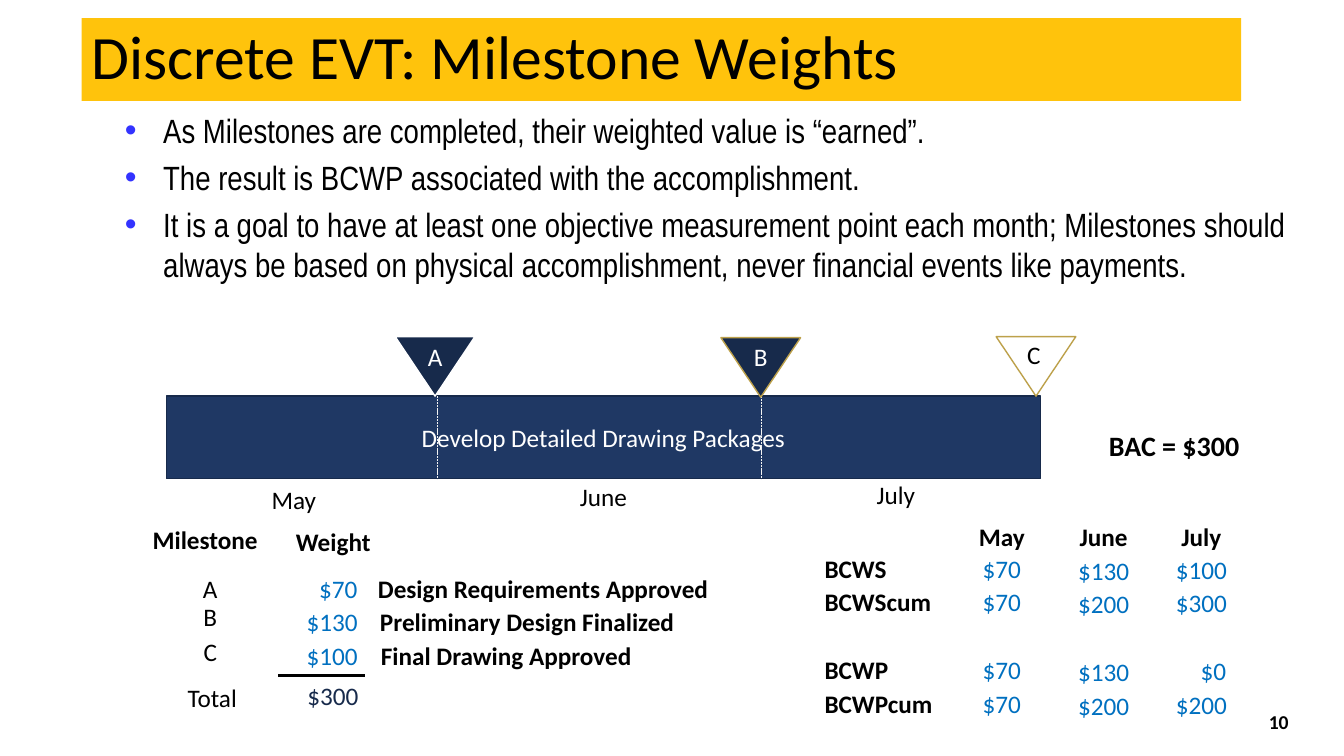
"""Build the slide on discrete earned value with milestone weights."""
from dataclasses import dataclass
from typing import Optional

from lxml.etree import SubElement
from pptx import Presentation
from pptx.dml.color import RGBColor
from pptx.enum.dml import MSO_LINE
from pptx.enum.shapes import MSO_CONNECTOR, MSO_SHAPE
from pptx.enum.text import MSO_ANCHOR as Anchor, PP_ALIGN as Align
from pptx.oxml.ns import qn
from pptx.util import Inches, Pt

BLACK = RGBColor(0x00, 0x00, 0x00)
WHITE = RGBColor(0xFF, 0xFF, 0xFF)
OFF_WHITE = RGBColor(0xF2, 0xF2, 0xF2)
NAVY = RGBColor(0x17, 0x2A, 0x4B)
BAR_BLUE = RGBColor(0x1F, 0x38, 0x64)
VALUE_BLUE = RGBColor(0x00, 0x70, 0xC0)
BULLET_BLUE = RGBColor(0x33, 0x33, 0xFF)
GOLD = RGBColor(0xBD, 0xA1, 0x4B)
AMBER = RGBColor(0xFF, 0xC3, 0x0C)

CELL_WIDTH = 0.99
TEXT_HEIGHT = 0.4
DIGIT_SHIFT = 0.06


@dataclass(frozen=True)
class Marker:
    """A triangle on the timeline with the place of its letter."""
    letter: str
    left: float
    top: float
    letter_left: float
    letter_top: float
    fill: Optional[RGBColor]
    outline: RGBColor
    ink: RGBColor


@dataclass(frozen=True)
class Milestone:
    """A row of the weight list."""
    letter: str
    letter_top: float
    weight: str
    event: str
    event_left: float


@dataclass(frozen=True)
class Month:
    """A month on the timeline and its column of values."""
    name: str
    label_left: float
    label_top: float
    left: float
    drop: float
    values: tuple[str, ...]


MARKERS = (
    Marker("A", 3.92, 3.34, 3.99, 3.34, NAVY, WHITE, WHITE),
    Marker("B", 7.15, 3.35, 7.22, 3.34, NAVY, GOLD, WHITE),
    Marker("C", 9.88, 3.34, 9.93, 3.32, None, GOLD, BLACK),
)
MILESTONES = (
    Milestone("A", 5.64, "$70", "Design Requirements Approved", 3.65),
    Milestone("B", 5.92, "$130", "Preliminary Design Finalized", 3.67),
    Milestone("C", 6.26, "$100", "Final Drawing Approved", 3.68),
)
MONTHS = (
    Month("May", 2.23, 4.76, 9.44, 0, ("$70", "$70", "$70", "$70")),
    Month("June", 5.3, 4.73, 10.45, 0.02, ("$130", "$200", "$130", "$200")),
    Month("July", 8.2, 4.71, 11.42, 0.01, ("$100", "$300", "$0", "$200")),
)
MEASURES = (("BCWS", 5.44), ("BCWScum", 5.77), ("BCWP", 6.44), ("BCWPcum", 6.78))
POINTS = (
    "As Milestones are completed, their weighted value is “earned”.",
    "The result is BCWP associated with the accomplishment.",
    "It is a goal to have at least one objective measurement point each month; "
    "Milestones should always be based on physical accomplishment, "
    "never financial events like payments.",
)

deck = Presentation()
deck.slide_width, deck.slide_height = Inches(13.33), Inches(7.5)
slide = deck.slides.add_slide(deck.slide_layouts[6])


def write(frame, text: str, *, size: float = 18, font: str = "Calibri",
          color: RGBColor = BLACK, bold: bool = False,
          align: Align = Align.CENTER, anchor: Anchor = Anchor.TOP):
    """Fill a text frame, one paragraph a line, and return its paragraphs."""
    frame.word_wrap = True
    frame.vertical_anchor = anchor
    frame.text = text
    for paragraph in frame.paragraphs:
        paragraph.alignment = align
        for run in paragraph.runs:
            run.font.size, run.font.name, run.font.bold = Pt(size), font, bold
            run.font.color.rgb = color
    return frame.paragraphs


def label(text: str, left: float, top: float, width: float = CELL_WIDTH,
          height: float = TEXT_HEIGHT, **style):
    """Add a text box and return its paragraphs."""
    box = slide.shapes.add_textbox(*map(Inches, (left, top, width, height)))
    return write(box.text_frame, text, **style)


def block(kind: MSO_SHAPE, left: float, top: float, width: float, height: float,
          fill: Optional[RGBColor] = None, outline: Optional[RGBColor] = None):
    """Add a flat shape."""
    shape = slide.shapes.add_shape(kind, *map(Inches, (left, top, width, height)))
    shape.shadow.inherit = False
    if fill is None:
        shape.fill.background()
    else:
        shape.fill.solid()
        shape.fill.fore_color.rgb = fill
    if outline is None:
        shape.line.fill.background()
    else:
        shape.line.color.rgb = outline
        shape.line.width = Pt(1)
    return shape


def rule(x1: float, y1: float, x2: float, y2: float, color: RGBColor,
         width: float, dash: Optional[MSO_LINE] = None) -> None:
    """Add a straight line."""
    line = slide.shapes.add_connector(
        MSO_CONNECTOR.STRAIGHT, *map(Inches, (x1, y1, x2, y2)))
    line.line.color.rgb = color
    line.line.width = Pt(width)
    if dash is not None:
        line.line.dash_style = dash
    SubElement(line._element.spPr, qn("a:effectLst"))


def add_bullet(paragraph) -> None:
    """Give a paragraph a hanging coloured bullet and space above."""
    props = paragraph._p.get_or_add_pPr()
    props.set("marL", str(Inches(0.38)))
    props.set("indent", str(-Inches(0.38)))
    space = SubElement(props, qn("a:spcBef"))
    SubElement(space, qn("a:spcPct"), val="20000")
    color = SubElement(props, qn("a:buClr"))
    SubElement(color, qn("a:srgbClr"), val=str(BULLET_BLUE))
    SubElement(props, qn("a:buFont"), typeface="Arial")
    SubElement(props, qn("a:buChar"), char="•")


def amounts(values: tuple[str, ...], left: float, tops: list[float]) -> None:
    """Add a column of amounts aligned on their last digit."""
    longest = max(map(len, values))
    for value, top in zip(values, tops):
        shift = DIGIT_SHIFT * (longest - len(value))
        label(value, left + shift, top, color=VALUE_BLUE)


def draw_heading() -> None:
    """Draw the title band and the bullet points."""
    band = block(MSO_SHAPE.RECTANGLE, 0.81, 0.18, 11.5, 0.82, AMBER)
    title, = write(band.text_frame, "Discrete EVT: Milestone Weights", size=44,
                   align=Align.LEFT, anchor=Anchor.MIDDLE)
    title.line_spacing = 0.9
    for point in label("\n".join(POINTS), 1.14, 1.04, 12.19, 1.88, size=24,
                       font="Arial Narrow", align=Align.LEFT):
        add_bullet(point)


def draw_timeline() -> None:
    """Draw the work bar with its markers and months."""
    bar = block(MSO_SHAPE.RECTANGLE, 1.65, 3.93, 8.67, 0.82, BAR_BLUE, NAVY)
    write(bar.text_frame, "Develop Detailed Drawing Packages", color=WHITE,
          anchor=Anchor.MIDDLE)
    for x in (4.34, 7.55):
        rule(x, 3.93, x, 4.76, OFF_WHITE, 0.5, MSO_LINE.SQUARE_DOT)
    for mark in MARKERS:
        triangle = block(MSO_SHAPE.ISOSCELES_TRIANGLE, mark.left, mark.top,
                         0.79, 0.59, mark.fill, mark.outline)
        triangle.rotation = 180
        label(mark.letter, mark.letter_left, mark.letter_top, 0.65, color=mark.ink)
    for month in MONTHS:
        label(month.name, month.label_left, month.label_top, 1.37)
    label("BAC = $300", 10.9, 4.2, 1.58, 0.44, size=20, bold=True, align=Align.LEFT)


def draw_weights() -> None:
    """Draw the milestone weights and their total."""
    label("Milestone", 1.37, 5.15, 1.33, bold=True)
    label("Weight", 2.81, 5.17, bold=True)
    tops = [5.64 + 0.33 * row for row in range(len(MILESTONES))]
    amounts(tuple(item.weight for item in MILESTONES), 2.8, tops)
    for item, top in zip(MILESTONES, tops):
        label(item.letter, 1.59, item.letter_top)
        label(item.event, item.event_left, top, 4.04, bold=True, align=Align.LEFT)
    rule(2.76, 6.7, 3.62, 6.7, BLACK, 2.25)
    label("Total", 1.61, 6.72)
    label("$300", 2.95, 6.7, 0.75, color=NAVY, align=Align.LEFT)


def draw_measures() -> None:
    """Draw the monthly planned and earned values."""
    for name, top in MEASURES:
        label(name, 8.08, top, 1.33, bold=True, align=Align.LEFT)
    for month in MONTHS:
        label(month.name, month.left, 5.12, bold=True)
        amounts(month.values, month.left, [top + month.drop for _, top in MEASURES])


if __name__ == "__main__":
    draw_heading()
    draw_timeline()
    draw_weights()
    draw_measures()
    label("10", 9.88, 6.96, 3, size=14, bold=True, align=Align.RIGHT,
          anchor=Anchor.MIDDLE)
    deck.save("out.pptx")
